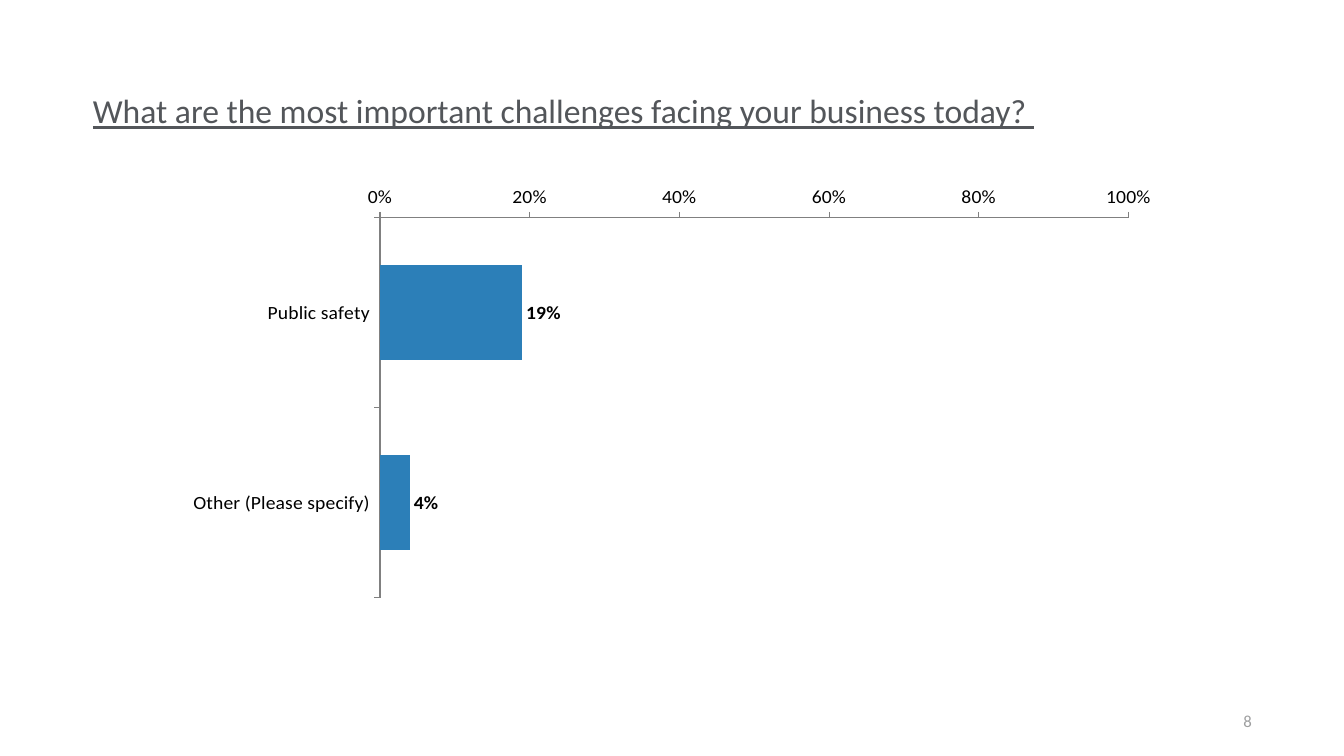
from lxml import etree
from pptx import Presentation
from pptx import util as u
from pptx.chart.data import CategoryChartData
from pptx.dml.color import RGBColor
from pptx.enum import chart as ch, text
from pptx.oxml import parse_xml

# Content
QUESTION = "What are the most important challenges facing your business today? "
PAGE = "8"
CHALLENGES = {"Public safety": 0.19, "Other (Please specify)": 0.04}
FONT = "Calibri"
COLORS = {"title": "53565A", "page": "9E9FA0", "bar": "2C7FB8",
          "axis": "808080", "label": "000000"}
# Plot area as fractions of the chart frame
PLOT = {"x": 0.207, "y": 0.02, "w": 0.75, "h": 0.885}

prs = Presentation()
prs.slide_width, prs.slide_height = u.Cm(33.87), u.Cm(19.05)
slide = prs.slides.add_slide(prs.slide_layouts[6])


def style(font, size, color, bold=False):
    font.name, font.size, font.bold = FONT, u.Pt(size), bold
    font.color.rgb = RGBColor.from_string(COLORS[color])


def add_text(words, box, size, color, align, anchor):
    frame = slide.shapes.add_textbox(*map(u.Cm, box)).text_frame
    frame.word_wrap = True
    frame.margin_left = frame.margin_right = 0
    frame.margin_top = frame.margin_bottom = 0
    frame.vertical_anchor = anchor
    frame.text = words
    line = frame.paragraphs[0]
    line.alignment = align
    style(line.runs[0].font, size, color)
    return line


# Title and page number
question = add_text(QUESTION, (2.34, 2.39, 29.21, 2.31), 24, "title",
                    text.PP_ALIGN.LEFT, text.MSO_ANCHOR.TOP)
question.line_spacing = 0.9
question.runs[0].font.underline = True
add_text(PAGE, (23.93, 17.65, 7.62, 1.02), 12, "page",
         text.PP_ALIGN.RIGHT, text.MSO_ANCHOR.MIDDLE)

# Bar chart of challenges
data = CategoryChartData(number_format="0%")
data.categories = list(CHALLENGES)
data.add_series("Series 1", list(CHALLENGES.values()))
challenges = slide.shapes.add_chart(
    ch.XL_CHART_TYPE.BAR_CLUSTERED,
    u.Cm(4.37), u.Cm(4.67), u.Cm(25.15), u.Cm(11.43), data).chart
challenges.has_title = challenges.has_legend = False
style(challenges.font, 14, "label")

bars = challenges.plots[0]
bars.gap_width = 100
bars.vary_by_categories = False
fill = bars.series[0].format.fill
fill.solid()
fill.fore_color.rgb = RGBColor.from_string(COLORS["bar"])

bars.has_data_labels = True
shares = bars.data_labels
shares.show_value = True
shares.number_format, shares.number_format_is_linked = "0%", False
shares.position = ch.XL_LABEL_POSITION.OUTSIDE_END
style(shares.font, 14, "label", bold=True)

# Axes
names, scale = challenges.category_axis, challenges.value_axis
for axis in (names, scale):
    axis.has_major_gridlines = False
    axis.major_tick_mark = ch.XL_TICK_MARK.OUTSIDE
    axis.minor_tick_mark = ch.XL_TICK_MARK.NONE
    axis.format.line.width = u.Pt(0.75)
    axis.format.line.color.rgb = RGBColor.from_string(COLORS["axis"])
    style(axis.tick_labels.font, 14, "label")
names.reverse_order = True
names.crosses = ch.XL_AXIS_CROSSES.MAXIMUM
scale.minimum_scale, scale.maximum_scale, scale.major_unit = 0, 1, 0.2
scale.tick_labels.number_format = "0%"
scale.tick_labels.number_format_is_linked = False

# Fixed plot area
C = "http://schemas.openxmlformats.org/drawingml/2006/chart"
plot_area = challenges.element.find(f".//{{{C}}}plotArea")
for old in plot_area.findall(f"{{{C}}}layout"):
    plot_area.remove(old)
layout = parse_xml(f'<c:layout xmlns:c="{C}"><c:manualLayout/></c:layout>')
settings = {"layoutTarget": "inner", "xMode": "edge", "yMode": "edge", **PLOT}
for tag, value in settings.items():
    etree.SubElement(layout[0], f"{{{C}}}{tag}", val=str(value))
plot_area.insert(0, layout)

prs.save("out.pptx")
